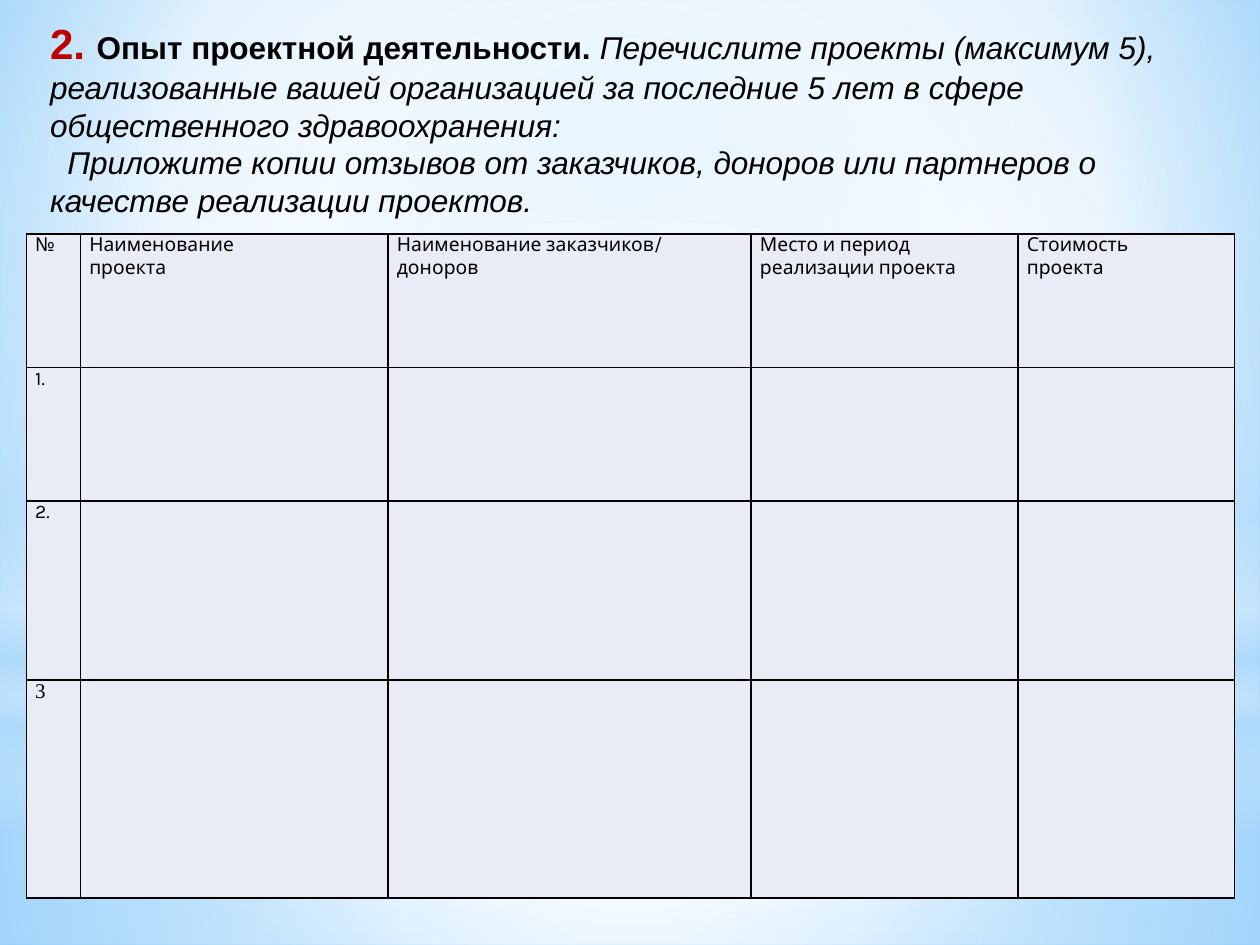
from dataclasses import dataclass
from typing import NamedTuple, Optional

from lxml.etree import SubElement
from pptx import Presentation
from pptx.dml.color import RGBColor
from pptx.enum.shapes import MSO_SHAPE
from pptx.enum.text import MSO_ANCHOR, MSO_AUTO_SIZE
from pptx.oxml.ns import qn
from pptx.util import Cm, Pt


@dataclass(frozen=True)
class Theme:
    white: str = "FFFFFF"
    haze: str = "B4DCFA"
    sky: str = "9ED5FF"
    deep_sky: str = "5BB9FF"
    ink: str = "000000"
    number: str = "C00000"
    cell: str = "E9EBF5"
    heading_font: str = "Arial"
    table_font: str = "Karla"
    last_row_font: str = "Times New Roman"
    number_size: int = 24
    heading_size: int = 18
    table_size: int = 11
    last_row_size: int = 12
    border: int = 1


class Stop(NamedTuple):
    position: int
    color: str
    opacity: int = 100


class Gradient(NamedTuple):
    stops: list[Stop]
    focus: tuple[int, int, int, int] = (50, 50, 50, 50)
    angle: Optional[int] = None


class Glow(NamedTuple):
    outline: MSO_SHAPE
    top: float
    height: float
    gradient: Gradient


THEME = Theme()
SLIDE_WIDTH, SLIDE_HEIGHT = 25.4, 19.05
SKY = Gradient(
    [Stop(0, THEME.sky), Stop(60, THEME.white), Stop(100, THEME.deep_sky)],
    focus=(20, 10, 20, 60),
)
GLOWS = [
    Glow(MSO_SHAPE.RECTANGLE, 14.17, 4.88, Gradient([
        Stop(0, THEME.white, 91), Stop(37, THEME.white, 76), Stop(100, THEME.haze, 79)])),
    Glow(MSO_SHAPE.RECTANGLE, 0, 14.17, Gradient([
        Stop(0, THEME.white, 89), Stop(48, THEME.white, 62), Stop(100, THEME.haze, 79)])),
    Glow(MSO_SHAPE.RECTANGLE, 10.46, 6.35, Gradient([
        Stop(0, THEME.white, 0), Stop(29, THEME.white, 30), Stop(45, THEME.haze, 40),
        Stop(55, THEME.white, 26), Stop(65, THEME.haze, 60), Stop(100, THEME.white, 0)],
        angle=90)),
    Glow(MSO_SHAPE.OVAL, 4.45, 14.17, Gradient([
        Stop(0, THEME.white), Stop(56, THEME.white, 0)])),
]
COLUMN_WIDTHS = [1.09, 6.2, 7.32, 5.38, 4.37]
ROW_HEIGHTS = [2.69, 2.69, 3.61, 4.39]
HEADINGS = [
    "№",
    "Наименование \nпроекта",
    "Наименование заказчиков/ доноров",
    "Место и период \nреализации проекта",
    "Стоимость \nпроекта",
]
ROW_NUMBERS = ["1.", "2.", "3"]


def paint_gradient(properties, gradient: Gradient) -> None:
    solid = properties.find(qn("a:solidFill"))
    fill = SubElement(properties, qn("a:gradFill"), rotWithShape="1")
    properties.replace(solid, fill)
    stop_list = SubElement(fill, qn("a:gsLst"))
    for stop in gradient.stops:
        mark = SubElement(stop_list, qn("a:gs"), pos=str(stop.position * 1000))
        color = SubElement(mark, qn("a:srgbClr"), val=stop.color)
        if stop.opacity < 100:
            SubElement(color, qn("a:alpha"), val=str(stop.opacity * 1000))
    if gradient.angle is not None:
        SubElement(fill, qn("a:lin"), ang=str(gradient.angle * 60000), scaled="0")
        return
    circle = SubElement(fill, qn("a:path"), path="circle")
    sides = {side: str(share * 1000) for side, share in zip("ltrb", gradient.focus)}
    SubElement(circle, qn("a:fillToRect"), **sides)


def draw_glow(slide, glow: Glow) -> None:
    light = slide.shapes.add_shape(
        glow.outline, Cm(0), Cm(glow.top), Cm(SLIDE_WIDTH), Cm(glow.height))
    light.shadow.inherit = False
    light.line.fill.background()
    light.fill.solid()
    paint_gradient(light.element.spPr, glow.gradient)


def write(paragraph, text: str, *, size: int, font: str, color: str = THEME.ink,
          bold: bool = False, italic: bool = False) -> None:
    for index, line in enumerate(text.split("\n")):
        if index:
            paragraph.add_line_break()
        run = paragraph.add_run()
        run.text = line
        run.font.size = Pt(size)
        run.font.name = font
        run.font.bold = bold
        run.font.italic = italic
        run.font.color.rgb = RGBColor.from_string(color)


def draw_heading(slide) -> None:
    heading = slide.shapes.add_textbox(Cm(0.76), Cm(0.2), Cm(24.41), Cm(4.37)).text_frame
    heading.word_wrap = True
    heading.auto_size = MSO_AUTO_SIZE.SHAPE_TO_FIT_TEXT
    heading.vertical_anchor = MSO_ANCHOR.MIDDLE
    task = heading.paragraphs[0]
    body = dict(size=THEME.heading_size, font=THEME.heading_font)
    write(task, "2. ", size=THEME.number_size, font=THEME.heading_font,
          color=THEME.number, bold=True)
    write(task, "Опыт проектной деятельности. ", bold=True, **body)
    write(task, "Перечислите проекты (максимум 5), реализованные вашей организацией "
          "за последние 5 лет в сфере общественного здравоохранения:", italic=True, **body)
    request = heading.add_paragraph()
    request._p.get_or_add_pPr().set("indent", str(Cm(0.35)))
    write(request, "Приложите копии отзывов от заказчиков, доноров или партнеров "
          "о качестве реализации проектов.", italic=True, **body)


def format_cell(cell) -> None:
    cell.margin_left = cell.margin_right = Cm(0.18)
    cell.margin_top = cell.margin_bottom = Cm(0)
    properties = cell._tc.get_or_add_tcPr()
    for side in ("lnL", "lnR", "lnT", "lnB"):
        border = SubElement(properties, qn(f"a:{side}"), w=str(Pt(THEME.border)))
        SubElement(SubElement(border, qn("a:solidFill")), qn("a:srgbClr"), val=THEME.ink)
    cell.fill.solid()
    cell.fill.fore_color.rgb = RGBColor.from_string(THEME.cell)


def draw_projects(slide) -> None:
    projects = slide.shapes.add_table(
        len(ROW_HEIGHTS), len(COLUMN_WIDTHS), Cm(0.53), Cm(4.72),
        Cm(sum(COLUMN_WIDTHS)), Cm(sum(ROW_HEIGHTS))).table
    projects.first_row = projects.horz_banding = False
    for column, width in zip(projects.columns, COLUMN_WIDTHS):
        column.width = Cm(width)
    for row, height in zip(projects.rows, ROW_HEIGHTS):
        row.height = Cm(height)
    for cell in projects.iter_cells():
        format_cell(cell)
    for index, title in enumerate(HEADINGS):
        write(projects.cell(0, index).text_frame.paragraphs[0], title,
              size=THEME.table_size, font=THEME.table_font)
    for index, number in enumerate(ROW_NUMBERS, start=1):
        last = index == len(ROW_NUMBERS)
        write(projects.cell(index, 0).text_frame.paragraphs[0], number,
              size=THEME.last_row_size if last else THEME.table_size,
              font=THEME.last_row_font if last else THEME.table_font)


def main() -> None:
    presentation = Presentation()
    presentation.slide_width = Cm(SLIDE_WIDTH)
    presentation.slide_height = Cm(SLIDE_HEIGHT)
    slide = presentation.slides.add_slide(presentation.slide_layouts[6])
    slide.background.fill.solid()
    paint_gradient(slide.element.find(f".//{qn('p:bgPr')}"), SKY)
    for glow in GLOWS:
        draw_glow(slide, glow)
    draw_projects(slide)
    draw_heading(slide)
    presentation.save("out.pptx")


if __name__ == "__main__":
    main()
